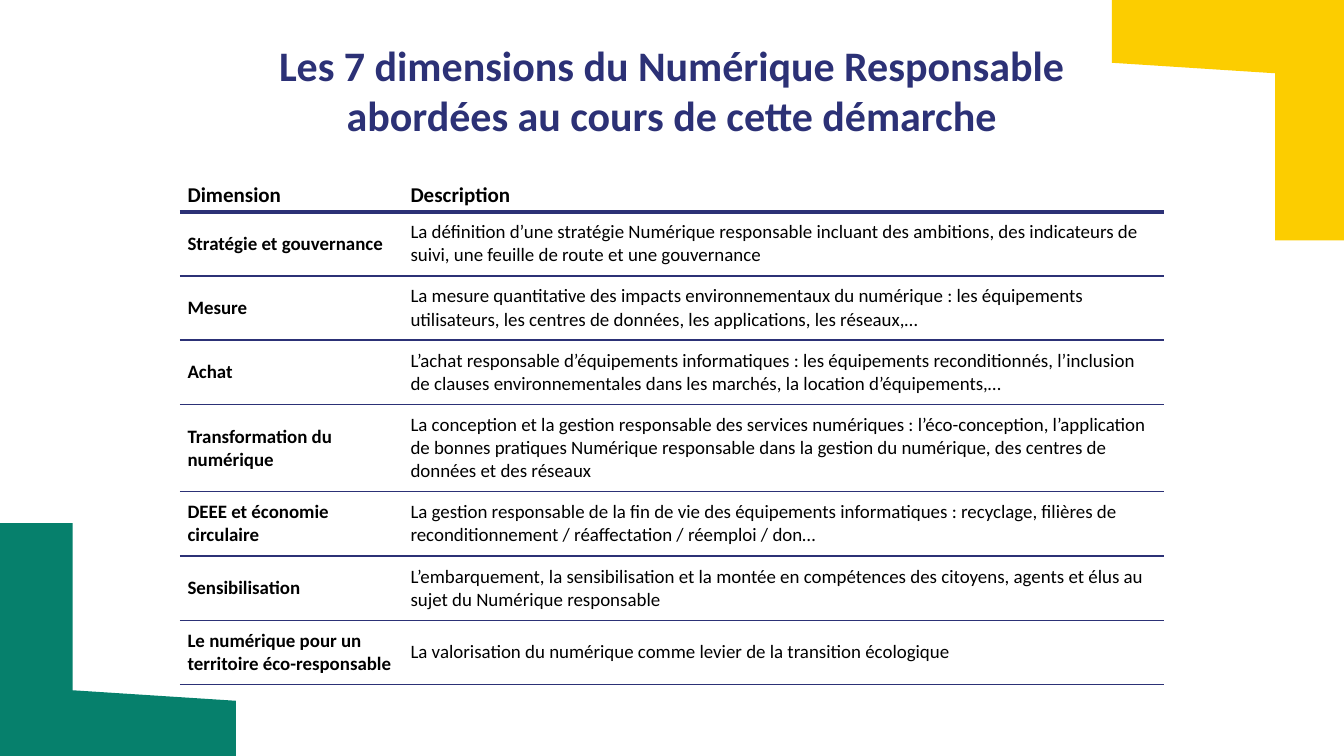
from dataclasses import dataclass

from lxml.etree import SubElement
from pptx import Presentation
from pptx.dml.color import RGBColor as RGB
from pptx.enum.text import MSO_ANCHOR as ANCHOR, PP_ALIGN as ALIGN
from pptx.oxml import parse_xml
from pptx.oxml.ns import nsdecls, qn
from pptx.util import Pt


@dataclass(frozen=True)
class Theme:
    font: str = "Calibri"
    navy: str = "2C3176"
    yellow: str = "FCCD00"
    green: str = "06806C"
    black: str = "000000"
    title: int = 40
    header: int = 20
    body: int = 18
    rule: float = 1.5
    header_rule: float = 4.5


SLIDE_W, SLIDE_H = 1280.16, 720
TABLE_LEFT, TABLE_TOP = 171.4, 170
COLUMNS = (212.4, 725)
HEADER_H, ROW_H, TALL_ROW_H = 31.6, 61.2, 83.2

TITLE = "Les 7 dimensions du Numérique Responsable\nabordées au cours de cette démarche"
HEADERS = ("Dimension", "Description")
DIMENSIONS = [
    ("Stratégie et gouvernance",
     "La définition d’une stratégie Numérique responsable incluant des ambitions, "
     "des indicateurs de suivi, une feuille de route et une gouvernance", ROW_H),
    ("Mesure",
     "La mesure quantitative des impacts environnementaux du numérique : les équipements "
     "utilisateurs, les centres de données, les applications, les réseaux,…", ROW_H),
    ("Achat",
     "L’achat responsable d’équipements informatiques : les équipements reconditionnés, "
     "l’inclusion de clauses environnementales dans les marchés, la location d’équipements,…",
     ROW_H),
    ("Transformation du numérique",
     "La conception et la gestion responsable des services numériques : l’éco-conception, "
     "l’application de bonnes pratiques Numérique responsable dans la gestion du numérique, "
     "des centres de données et des réseaux", TALL_ROW_H),
    ("DEEE et économie circulaire",
     "La gestion responsable de la fin de vie des équipements informatiques : recyclage, "
     "filières de reconditionnement / réaffectation / réemploi / don…", ROW_H),
    ("Sensibilisation",
     "L’embarquement, la sensibilisation et la montée en compétences des citoyens, "
     "agents et élus au sujet du Numérique responsable", ROW_H),
    ("Le numérique pour un territoire éco-responsable",
     "La valorisation du numérique comme levier de la transition écologique", ROW_H),
]


def apply(obj, **values):
    for name, value in values.items():
        setattr(obj, name, value)


class Deck:
    def __init__(self, theme):
        self.theme = theme
        self.prs = Presentation()
        apply(self.prs, slide_width=Pt(SLIDE_W), slide_height=Pt(SLIDE_H))
        self.s = self.prs.slides.add_slide(self.prs.slide_layouts[6])

    def text(self, tf, text, size, color, bold, align=ALIGN.LEFT):
        p = tf.paragraphs[0]
        p.text = text
        p.alignment = align
        for r in p.runs:
            apply(r.font, name=self.theme.font, size=Pt(size), bold=bold)
            r.font.color.rgb = RGB.from_string(color)

    def title(self, text, x, y, w, h):
        tf = self.s.shapes.add_textbox(Pt(x), Pt(y), Pt(w), Pt(h)).text_frame
        apply(tf, word_wrap=True, margin_left=0, margin_top=0,
              margin_right=0, margin_bottom=0)
        self.text(tf, text, self.theme.title, self.theme.navy, True, ALIGN.CENTER)

    def corner(self, points, color):
        start, *rest = [(Pt(x), Pt(y)) for x, y in points]
        builder = self.s.shapes.build_freeform(*start)
        builder.add_line_segments(rest, close=True)
        sp = builder.convert_to_shape()
        sp.shadow.inherit = False
        sp.fill.solid()
        sp.fill.fore_color.rgb = RGB.from_string(color)
        sp.line.fill.background()

    def borders(self, cell, top, bottom):
        tc_pr = cell._tc.get_or_add_tcPr()
        sides = (("lnL", 0), ("lnR", 0), ("lnT", top), ("lnB", bottom))
        for i, (side, width) in enumerate(sides):
            ln = parse_xml(f'<a:{side} {nsdecls("a")} w="{Pt(width)}"/>')
            if width:
                fill = SubElement(ln, qn("a:solidFill"))
                SubElement(fill, qn("a:srgbClr"), val=self.theme.navy)
            else:
                SubElement(ln, qn("a:noFill"))
            tc_pr.insert(i, ln)

    def table(self, headers, rows, x, y, widths):
        t = self.theme
        records = [(*headers, HEADER_H), *rows]
        heights = [record[-1] for record in records]
        table = self.s.shapes.add_table(
            len(records), len(widths), Pt(x), Pt(y), Pt(sum(widths)), Pt(sum(heights))).table
        apply(table, first_row=False, horz_banding=False)
        for column, width in zip(table.columns, widths):
            column.width = Pt(width)
        for i, (*texts, height) in enumerate(records):
            table.rows[i].height = Pt(height)
            head = i == 0
            margin = Pt(3.6 if head else 8.64)
            top = (0, t.header_rule)[i] if i < 2 else t.rule
            bottom = t.header_rule if head else t.rule
            for j, text in enumerate(texts):
                cell = table.cell(i, j)
                apply(cell, margin_left=Pt(7.2), margin_right=Pt(7.2),
                      margin_top=margin, margin_bottom=margin,
                      vertical_anchor=ANCHOR.TOP if head else ANCHOR.MIDDLE)
                cell.fill.background()
                self.borders(cell, top, bottom)
                self.text(cell.text_frame, text, t.header if head else t.body,
                          t.black, head or j == 0)


def main():
    theme = Theme()
    deck = Deck(theme)
    deck.title(TITLE, 78.5, 37.4, 1122.5, 97.2)
    deck.corner([(SLIDE_W, 0), (1059.1, 0), (1059.1, 59.8), (1214.6, 69.8),
                 (1214.6, 229), (SLIDE_W, 229)], theme.yellow)
    deck.corner([(69.1, 498.2), (0, 498.2), (0, SLIDE_H), (224.6, SLIDE_H),
                 (224.6, 667.4), (69.1, 657.4)], theme.green)
    deck.table(HEADERS, DIMENSIONS, TABLE_LEFT, TABLE_TOP, COLUMNS)
    deck.prs.save("out.pptx")


if __name__ == "__main__":
    main()
